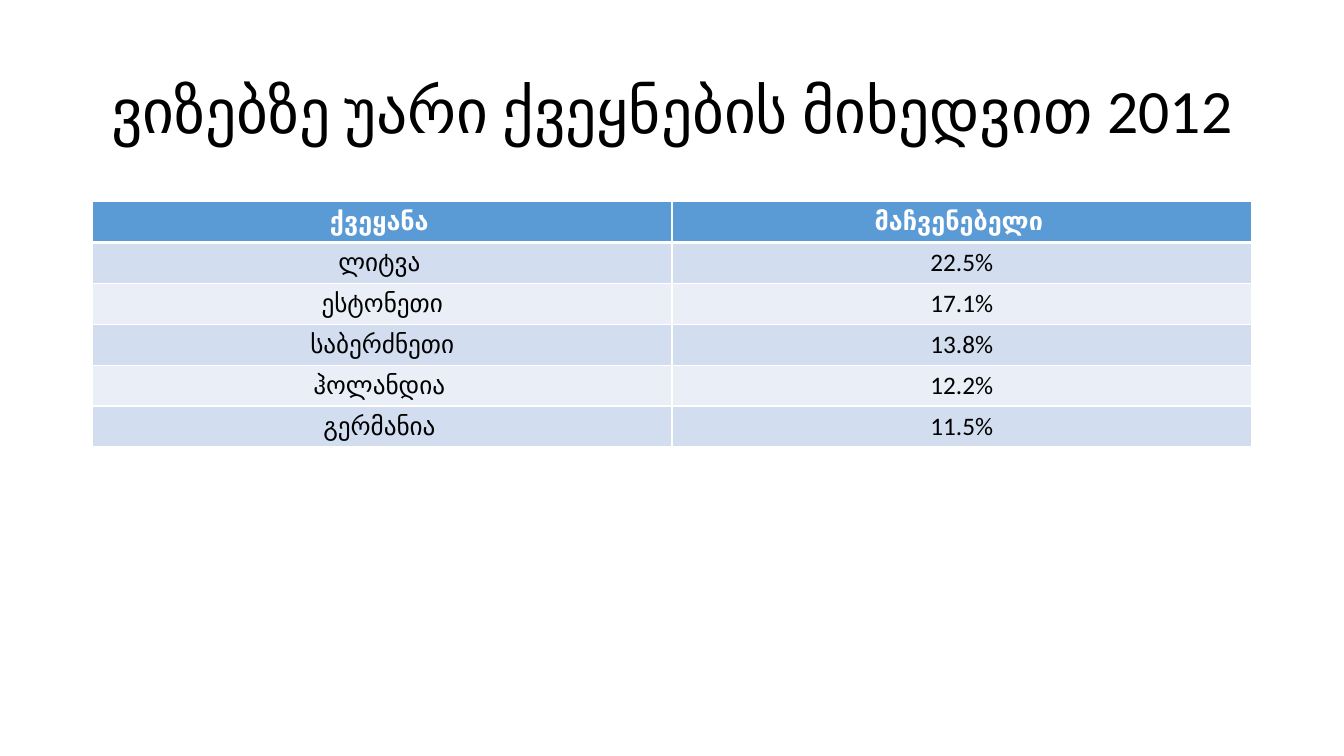
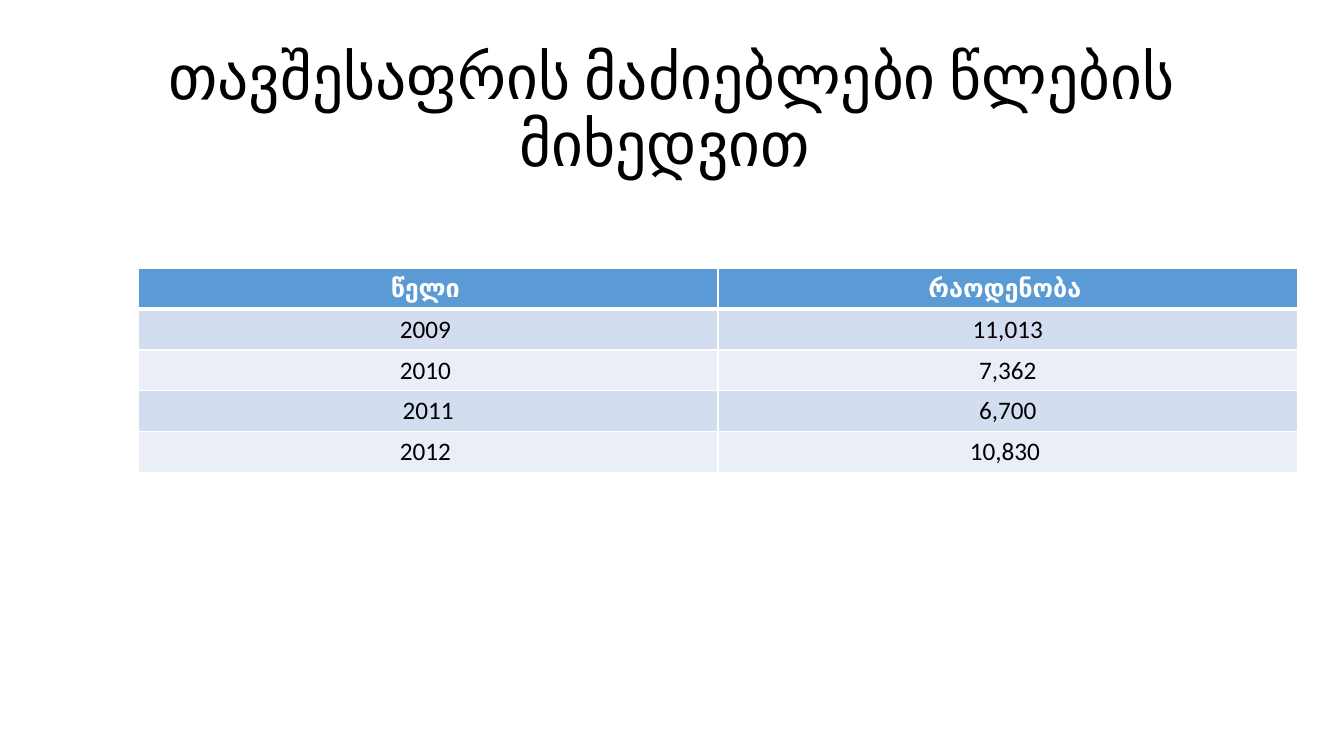
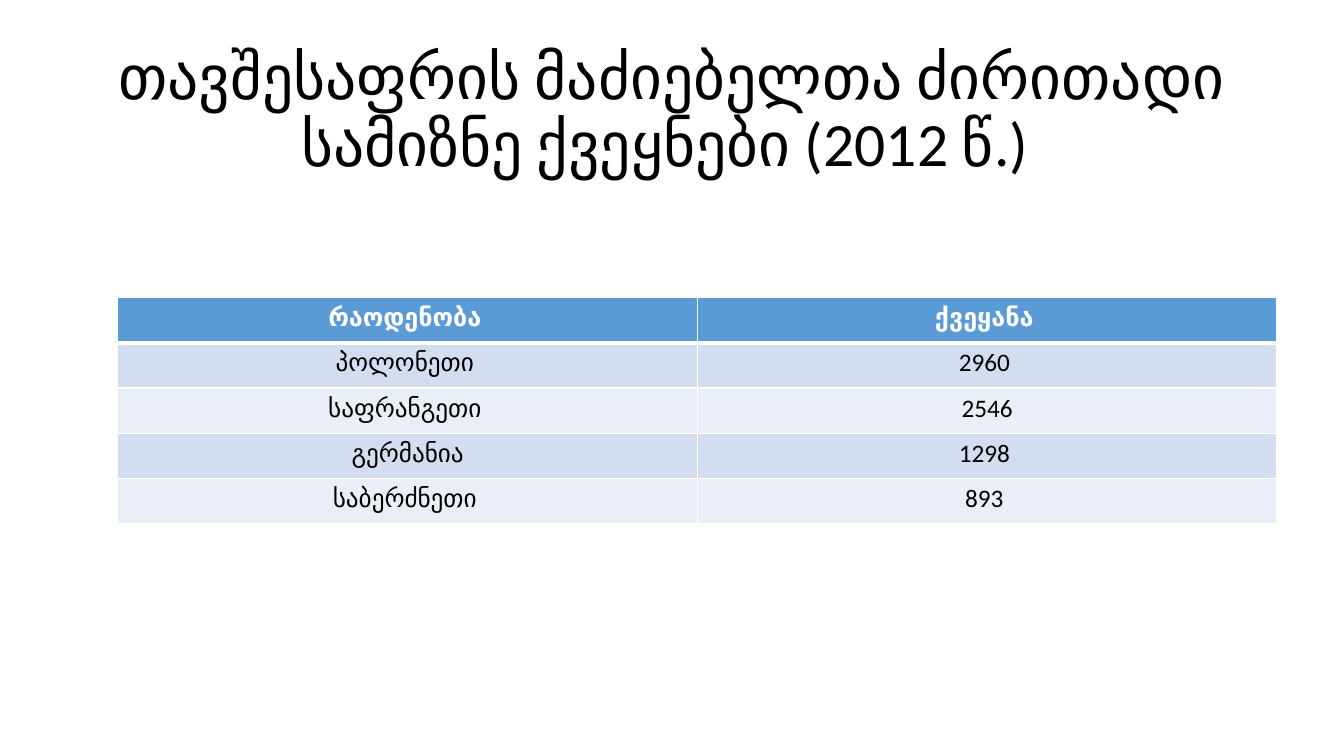
"""Builds three slides of visa and asylum tables."""
from lxml.etree import SubElement
from pptx import Presentation
from pptx.dml.color import RGBColor as RGB
from pptx.enum.text import MSO_ANCHOR as ANCHOR, MSO_AUTO_SIZE as FIT, PP_ALIGN as ALIGN
from pptx.oxml.ns import qn
from pptx.util import Cm, Pt

COLORS = {"text": "000000", "white": "FFFFFF", "header": "5B9BD5",
          "odd": "D2DEEF", "even": "EAEFF7"}
FONT = "Calibri"
LEFT, WIDTH = 2.33, 29.21

SLIDES = [
    ("ვიზებზე უარი ქვეყნების მიხედვით 2012", LEFT, 5.08, 1.03, [
        ("ქვეყანა ", "მაჩვენებელი "),
        ("ლიტვა ", "22.5%"),
        ("ესტონეთი", "17.1%"),
        ("საბერძნეთი", "13.8%"),
        ("ჰოლანდია ", "12.2%"),
        ("გერმანია ", "11.5%"),
    ]),
    ("თავშესაფრის მაძიებლები წლების მიხედვით ", 3.49, 6.76, 1.03, [
        ("წელი ", "რაოდენობა "),
        ("2009 ", "11,013"),
        ("2010 ", "7,362"),
        ("2011", "6,700"),
        ("2012 ", "10,830 "),
    ]),
    ("თავშესაფრის მაძიებელთა ძირითადი სამიზნე ქვეყნები (2012 წ.) ", 2.97, 7.5, 1.14, [
        ("რაოდენობა ", "ქვეყანა "),
        ("პოლონეთი ", "2960 "),
        ("საფრანგეთი ", "2546"),
        ("გერმანია", "1298 "),
        ("საბერძნეთი ", "893 "),
    ]),
]


def write(tf, text, size=18, color="text", bold=False, spacing=1.0):
    p = tf.paragraphs[0]
    p.alignment = ALIGN.CENTER
    p.line_spacing = spacing
    r = p.add_run()
    r.text = text
    r.font.name = FONT
    r.font.size = Pt(size)
    r.font.bold = bold
    r.font.color.rgb = RGB.from_string(COLORS[color])


def add_borders(cell, **widths):
    tcPr = cell._tc.get_or_add_tcPr()
    for side in ("L", "R", "T", "B"):
        ln = SubElement(tcPr, qn(f"a:ln{side}"), w=str(Pt(widths.get(side, 1))))
        fill = SubElement(ln, qn("a:solidFill"))
        SubElement(fill, qn("a:srgbClr"), val=COLORS["white"])


prs = Presentation()
prs.slide_width, prs.slide_height = Cm(33.87), Cm(19.05)
layout = prs.slide_layouts.get_by_name("Title Only")

for title, left, top, row_height, rows in SLIDES:
    s = prs.slides.add_slide(layout)
    sp = s.shapes.title
    sp.left, sp.top, sp.width, sp.height = Cm(LEFT), Cm(1.01), Cm(WIDTH), Cm(3.68)
    tf = sp.text_frame
    tf.auto_size = FIT.NONE
    tf.vertical_anchor = ANCHOR.MIDDLE
    write(tf, title, size=44, spacing=0.9)

    frame = s.shapes.add_table(len(rows), 2, Cm(left), Cm(top),
                               Cm(WIDTH), Cm(row_height * len(rows)))
    table = frame.table
    for i, values in enumerate(rows):
        table.rows[i].height = Cm(row_height)
        header = i == 0
        fill = "header" if header else "odd" if i % 2 else "even"
        for j, value in enumerate(values):
            cell = table.cell(i, j)
            add_borders(cell, T=3 if i == 1 else 1, B=3 if header else 1)
            cell.fill.solid()
            cell.fill.fore_color.rgb = RGB.from_string(COLORS[fill])
            write(cell.text_frame, value, bold=header,
                  color="white" if header else "text")

prs.save("out.pptx")
